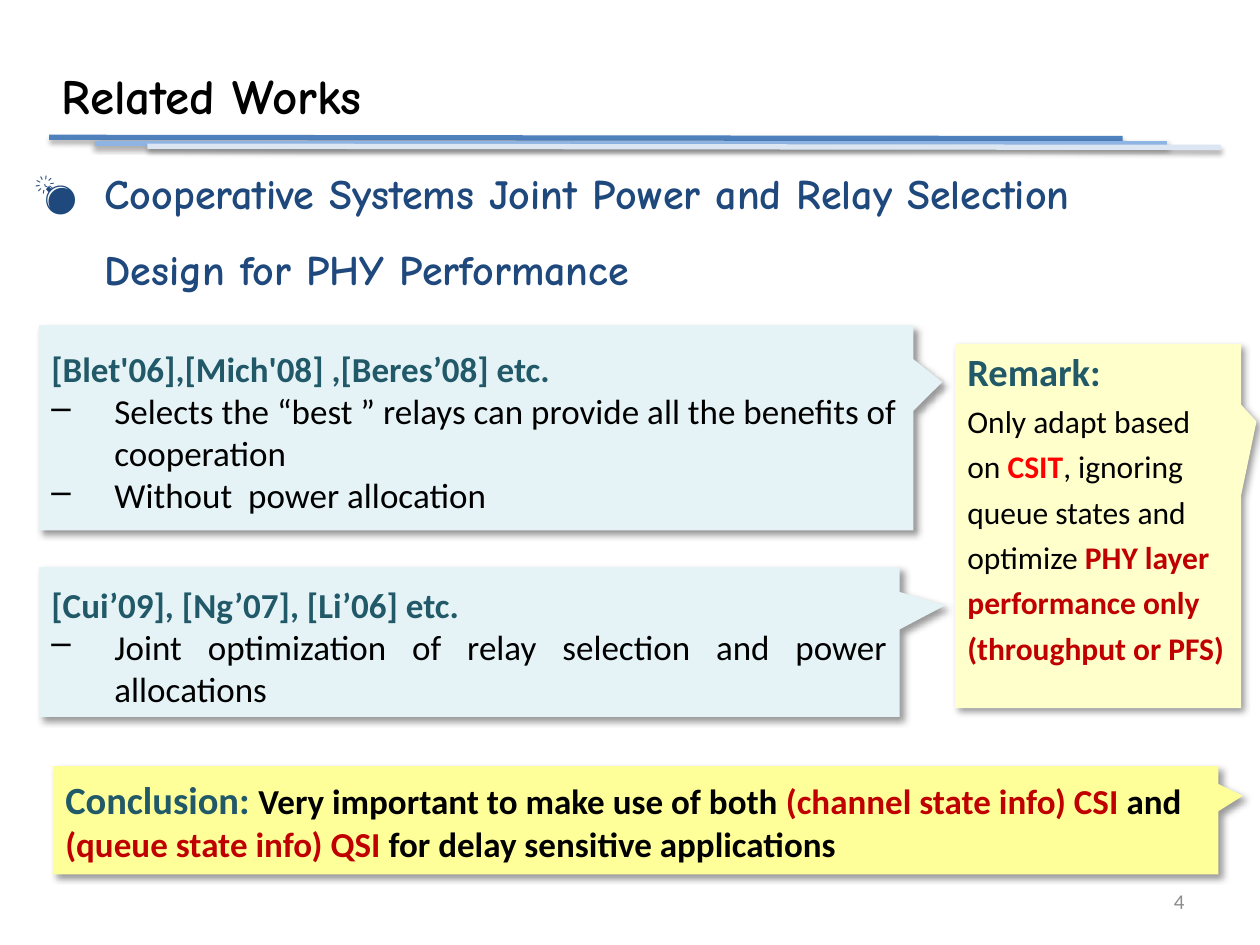
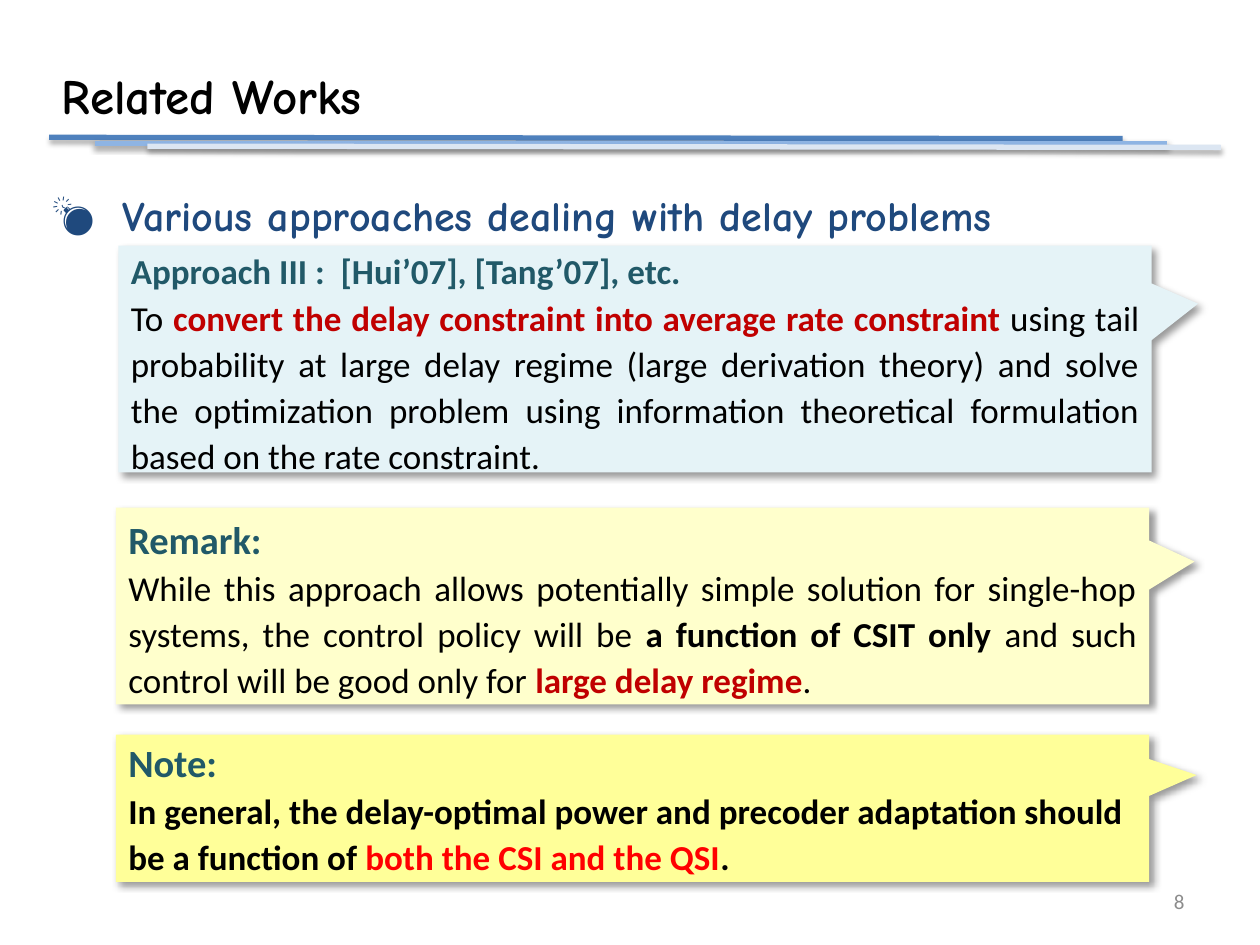
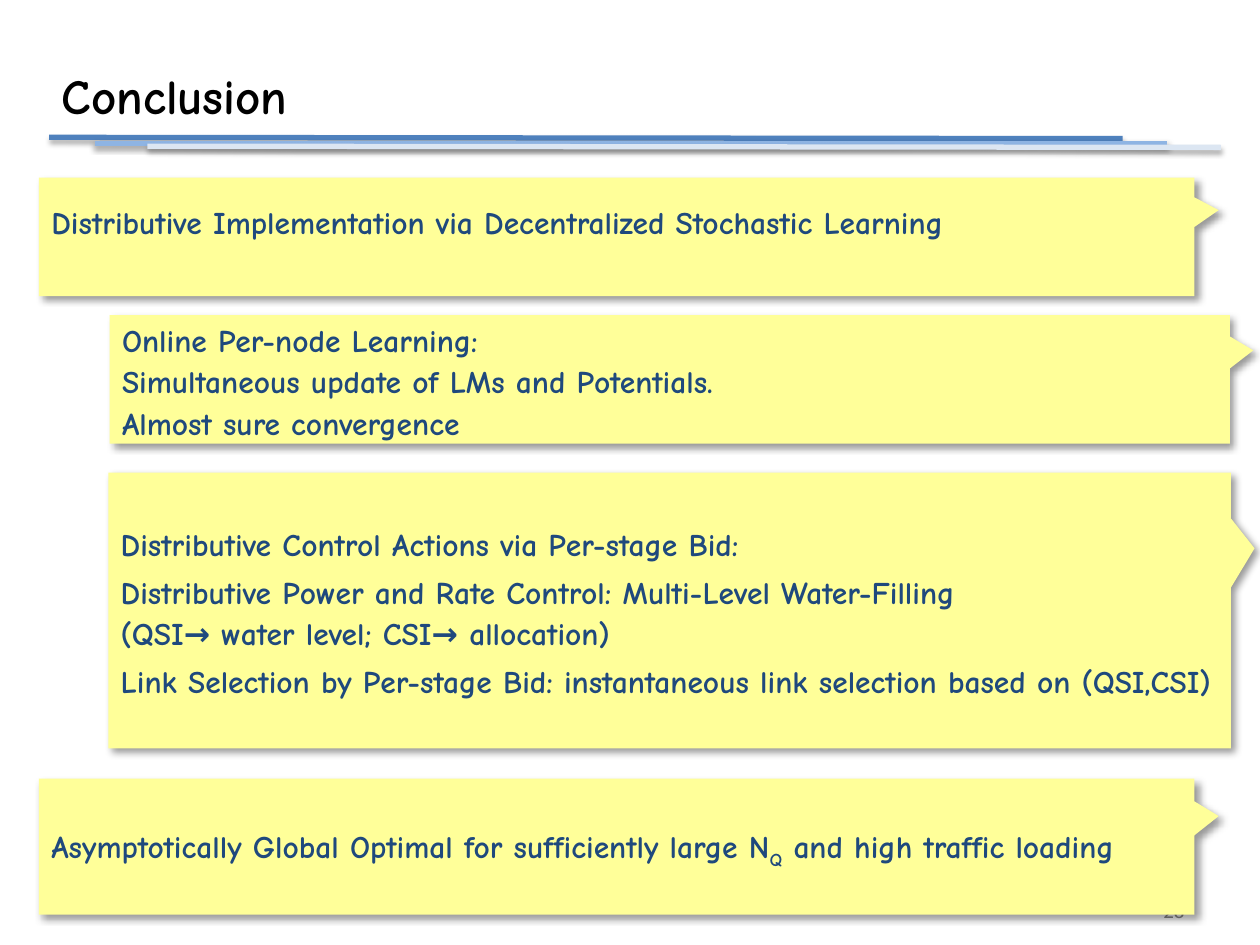
from dataclasses import dataclass

import pptx
import pptx.dml.color
import pptx.enum.shapes
import pptx.enum.text
import pptx.oxml.xmlchemy
import pptx.util

Inches, Pt = pptx.util.Inches, pptx.util.Pt
ALIGN = pptx.enum.text.PP_ALIGN
ANCHOR = pptx.enum.text.MSO_ANCHOR

BLACK, GREY, NAVY, TEAL = "000000", "8C8C8C", "1F497D", "215968"
RED, DARK_RED = "FF0000", "C00000"
PALE_BLUE, CREAM, YELLOW = "E5F3F7", "FFFFCC", "FFFF99"
SANS, COMIC = "Calibri", "Comic Neue"


@dataclass
class Span:
    text: str
    color: str = BLACK
    bold: bool = False
    size: float = 0  # 0 takes the size of the paragraph
    subscript: bool = False


@dataclass
class Para:
    spans: list[Span]
    size: float = 20
    spacing: float = 1.0
    before: float = 0
    align: ALIGN = ALIGN.LEFT
    font: str = SANS
    bullet: str = ""
    hang: float = 0


@dataclass
class Callout:
    box: tuple[float, float, float, float]
    tip: tuple[float, float]
    fill: str
    paras: list[Para]
    bottom_inset: float = 0.05


@dataclass
class Rule:
    start: tuple[float, float]
    end: tuple[float, float]
    color: str


@dataclass
class Page:
    title: str
    title_width: float
    number: str
    number_top: float
    callouts: list[Callout]
    topic: str = ""
    topic_box: tuple[float, float, float, float] = (0, 0, 0, 0)


RULES = [
    Rule((0.39, 1.09), (8.91, 1.10), "4F81BD"),
    Rule((0.75, 1.14), (9.26, 1.14), "8EB4E3"),
    Rule((1.17, 1.16), (9.69, 1.17), "DCE6F2"),
]


def rgb(color: str) -> pptx.dml.color.RGBColor:
    return pptx.dml.color.RGBColor.from_string(color)


def heading(text: str, size: float = 20, spacing: float = 1.2, before: float = 0,
            align: ALIGN = ALIGN.LEFT) -> Para:
    return Para([Span(text, TEAL, True)], size, spacing, before, align)


def dash(text: str, align: ALIGN = ALIGN.LEFT) -> Para:
    return Para([Span(text)], align=align, bullet="–", hang=0.5)


def comic(*texts: str, before: float = 0) -> Para:
    return Para([Span(t, NAVY, True) for t in texts], 18, 1.1, before, font=COMIC)


def place(shape, box: tuple[float, float, float, float]) -> None:
    shape.left, shape.top, shape.width, shape.height = map(Inches, box)


def add_child(parent, tag: str, **attributes):
    child = pptx.oxml.xmlchemy.OxmlElement(tag)
    for name, value in attributes.items():
        child.set(name, str(value))
    parent.append(child)
    return child


def cast_shadow(shape, opacity: int, blur: float, distance: float, angle: int) -> None:
    """Add an outer shadow; call once fill and line are set."""
    effects = add_child(shape._element.spPr, "a:effectLst")
    shadow = add_child(effects, "a:outerShdw", blurRad=Pt(blur), dist=Pt(distance),
                       dir=angle * 60000, algn="tl", rotWithShape=0)
    color = add_child(shadow, "a:srgbClr", val=BLACK)
    add_child(color, "a:alpha", val=opacity * 1000)


def write_span(p, span: Span, para: Para) -> None:
    for i, line in enumerate(span.text.split("\n")):
        if i:
            p.add_line_break()
        r = p.add_run()
        r.text = line
        r.font.name = para.font
        r.font.size = Pt(span.size or para.size)
        r.font.bold = span.bold
        r.font.color.rgb = rgb(span.color)
        if span.subscript:
            r._r.get_or_add_rPr().set("baseline", "-25000")


def write(tf, paras: list[Para], anchor: ANCHOR = ANCHOR.MIDDLE) -> None:
    tf.word_wrap = True
    tf.auto_size = pptx.enum.text.MSO_AUTO_SIZE.NONE
    tf.vertical_anchor = anchor
    for i, para in enumerate(paras):
        p = tf.add_paragraph() if i else tf.paragraphs[0]
        p.alignment = para.align
        p.line_spacing = para.spacing
        p.space_before = Pt(para.before)
        if para.bullet:
            pPr = p._p.get_or_add_pPr()
            pPr.set("marL", str(Inches(para.hang)))
            pPr.set("indent", str(-Inches(para.hang)))
            add_child(pPr, "a:buChar", char=para.bullet)
        for span in para.spans:
            write_span(p, span, para)


def draw_rule(s, rule: Rule) -> None:
    line = s.shapes.add_connector(pptx.enum.shapes.MSO_CONNECTOR.STRAIGHT,
                                  *map(Inches, rule.start + rule.end))
    line.line.color.rgb = rgb(rule.color)
    line.line.width = Pt(3)
    cast_shadow(line, 35, 3.1, 1.8, 90)


def draw_callout(s, callout: Callout) -> None:
    sp = s.shapes.add_shape(pptx.enum.shapes.MSO_SHAPE.RECTANGULAR_CALLOUT,
                            *map(Inches, callout.box))
    sp.adjustments[0], sp.adjustments[1] = callout.tip
    sp.fill.solid()
    sp.fill.fore_color.rgb = rgb(callout.fill)
    sp.line.fill.background()
    cast_shadow(sp, 40, 4, 3, 45)
    sp.text_frame.margin_bottom = Inches(callout.bottom_inset)
    write(sp.text_frame, callout.paras)


def draw_page(prs, page: Page) -> None:
    layout = prs.slide_layouts[1 if page.topic else 5]
    s = prs.slides.add_slide(layout)
    for rule in RULES:
        draw_rule(s, rule)

    title = s.shapes.title
    place(title, (0.39, 0.47, page.title_width, 0.57))
    write(title.text_frame, [Para([Span(page.title, BLACK, True)], 28, font=COMIC)],
          ANCHOR.TOP)
    title.text_frame.word_wrap = False
    title.text_frame.auto_size = pptx.enum.text.MSO_AUTO_SIZE.SHAPE_TO_FIT_TEXT

    number = s.shapes.add_textbox(*map(Inches, (7.17, page.number_top, 2.33, 0.4)))
    write(number.text_frame, [Para([Span(page.number, GREY)], 12, align=ALIGN.RIGHT)])

    if page.topic:
        body = s.placeholders[1]
        place(body, page.topic_box)
        write(body.text_frame,
              [Para([Span(page.topic, NAVY, True)], 24, 1.5, 4.8, font=COMIC,
                    bullet="💣", hang=0.56)], ANCHOR.TOP)
    for callout in page.callouts:
        draw_callout(s, callout)


POWER_AND_RELAY = Page(
    "Related Works", 3.01, "4", 6.95,
    topic="Cooperative Systems Joint Power and Relay Selection Design for PHY Performance",
    topic_box=(0.17, 1.08, 9.45, 1.33),
    callouts=[
        Callout((0.31, 2.58, 6.94, 1.63), (0.533, -0.222), PALE_BLUE, [
            heading("[Blet'06],[Mich'08] ,[Beres’08] etc.", align=ALIGN.JUSTIFY),
            dash("Selects the “best ” relays can provide all the benefits of cooperation"),
            dash("Without  power allocation"),
        ]),
        Callout((0.31, 4.5, 6.83, 1.19), (0.553, -0.244), PALE_BLUE, [
            heading("[Cui’09], [Ng’07], [Li’06] etc.", align=ALIGN.JUSTIFY),
            dash("Joint optimization of relay selection and power allocations", ALIGN.JUSTIFY),
        ]),
        Callout((7.58, 2.73, 2.27, 2.89), (0.554, -0.287), CREAM, [
            heading("Remark:", 22, before=6),
            Para([
                Span("Only adapt based on "),
                Span("CSIT", RED, True),
                Span(", ignoring queue states and optimize "),
                Span("PHY layer performance only (throughput or PFS)", DARK_RED, True),
            ], 18, 1.2),
        ], bottom_inset=0.42),
        Callout((0.42, 6.08, 9.25, 0.86), (0.521, -0.225), YELLOW, [
            Para([
                Span("Conclusion: ", TEAL, True, 22),
                Span("Very important to make use of both ", BLACK, True),
                Span("(channel state info) CSI ", DARK_RED, True),
                Span("and ", BLACK, True),
                Span("(queue state info) QSI ", DARK_RED, True),
                Span("for delay sensitive applications", BLACK, True),
            ]),
        ]),
    ])

DELAY_APPROACHES = Page(
    "Related Works", 3.01, "8", 6.95,
    topic="Various approaches dealing with delay problems",
    topic_box=(0.31, 1.25, 9.45, 5.94),
    callouts=[
        Callout((0.94, 1.95, 8.2, 1.8), (0.545, -0.244), PALE_BLUE, [
            heading("Approach III :  [Hui’07], [Tang’07], etc."),
            Para([
                Span("To "),
                Span("convert the delay constraint into average rate constraint ",
                     DARK_RED, True),
                Span("using tail probability at large delay regime (large derivation "
                     "theory) and solve the optimization problem using information "
                     "theoretical formulation based on the rate constraint."),
            ], spacing=1.1, align=ALIGN.JUSTIFY),
        ]),
        Callout((0.92, 4.03, 8.2, 1.56), (0.544, -0.226), CREAM, [
            heading("Remark:", 22, 1.1, 6),
            Para([
                Span("While this approach allows potentially simple solution for "
                     "single-hop systems, the control policy will be "),
                Span("a function of CSIT only ", BLACK, True),
                Span("and such control will be good only for "),
                Span("large delay regime", DARK_RED, True),
                Span("."),
            ], spacing=1.1, align=ALIGN.JUSTIFY),
        ]),
        Callout((0.92, 5.83, 8.2, 1.17), (0.546, -0.225), YELLOW, [
            heading("Note:", 22, 1.0),
            Para([
                Span("In general, the delay-optimal power and precoder adaptation "
                     "should be a function of ", BLACK, True),
                Span("both the CSI and the QSI", RED, True),
                Span(".", BLACK, True),
            ], spacing=1.1),
        ]),
    ])

TIP = (0.521, -0.225)
OPTIMALITY = comic("Asymptotically Global Optimal for sufficiently large N", "Q",
                   " and high traffic loading")
OPTIMALITY.spans[1].subscript = True

CONCLUSION = Page(
    "Conclusion", 2.25, "28", 7.02,
    callouts=[
        Callout((0.87, 2.5, 8.89, 1.02), TIP, YELLOW, [
            comic("Online Per-node Learning:\n"
                  "Simultaneous update of LMs and Potentials.\n"
                  "Almost sure convergence"),
        ]),
        Callout((0.31, 1.41, 9.17, 0.94), TIP, YELLOW, [
            comic("Distributive Implementation via Decentralized Stochastic Learning"),
        ], bottom_inset=0.32),
        Callout((0.31, 6.18, 9.17, 1.08), TIP, YELLOW, [OPTIMALITY]),
        Callout((0.86, 3.75, 8.91, 2.19), TIP, YELLOW, [
            comic("Distributive Control Actions via Per-stage Bid:", before=3.6),
            comic("Distributive Power and Rate Control: Multi-Level Water-Filling\n"
                  "(QSI→ water level; CSI→ allocation)", before=3.6),
            comic("Link Selection by Per-stage Bid: instantaneous link selection "
                  "based on (QSI,CSI)", before=3.6),
        ]),
    ])


def main() -> None:
    prs = pptx.Presentation()
    prs.slide_width, prs.slide_height = Inches(10), Inches(7.5)
    for page in (POWER_AND_RELAY, DELAY_APPROACHES, CONCLUSION):
        draw_page(prs, page)
    prs.save("out.pptx")


if __name__ == "__main__":
    main()
